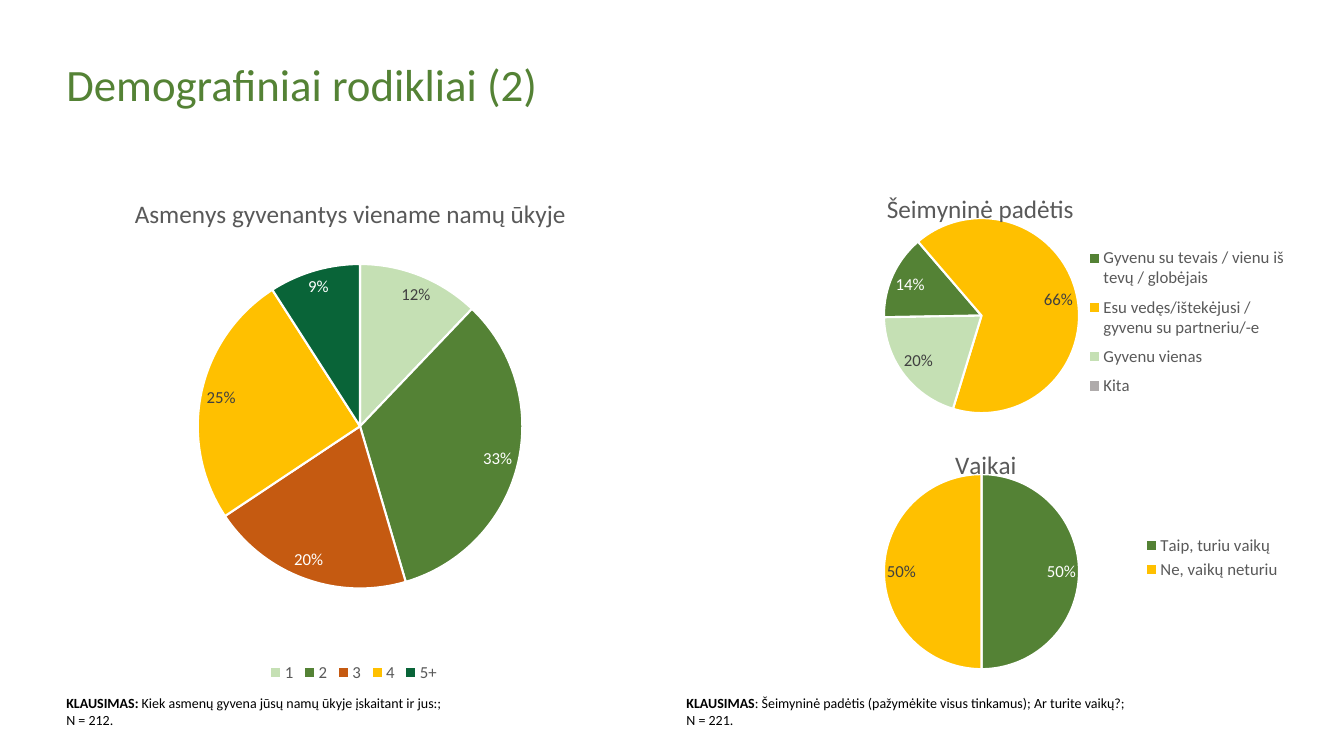
from lxml import etree
from pptx import Presentation
from pptx.chart.data import CategoryChartData
from pptx.dml.color import RGBColor as RGB
from pptx.enum.chart import XL_CHART_TYPE as CT, XL_LABEL_POSITION as LP, XL_LEGEND_POSITION as LG
from pptx.enum.text import MSO_ANCHOR as MA, PP_ALIGN as PA
from pptx.oxml.ns import qn
from pptx.util import Inches, Pt

COLORS = {"green": "548235", "gold": "FFC000", "light": "C5E0B4", "rust": "C55A11",
          "forest": "096438", "gray": "AFABAB", "black": "000000", "white": "FFFFFF",
          "label": "404040", "muted": "595959"}
DARK = {"green", "rust", "forest"}


class SlideBuilder:
    font = "Calibri"

    def __init__(self, prs):
        self.slide = prs.slides.add_slide(prs.slide_layouts[6])

    def style(self, font, size, color, bold=False):
        values = {"name": self.font, "size": Pt(size), "bold": bold}
        for name, value in values.items():
            setattr(font, name, value)
        font.color.rgb = RGB.from_string(COLORS[color])

    def text(self, box, paragraphs, size, color, anchor=MA.TOP, **formats):
        sp = self.slide.shapes.add_textbox(*map(Inches, box))
        tf = sp.text_frame
        tf.word_wrap = True
        tf.vertical_anchor = anchor
        for i, runs in enumerate(paragraphs):
            p = tf.add_paragraph() if i else tf.paragraphs[0]
            for name, value in formats.items():
                setattr(p, name, value)
            for content, bold in runs:
                r = p.add_run()
                r.text = content
                self.style(r.font, size, color, bold)

    def layout(self, parent, before, target=None, **fractions):
        for old in parent.findall(qn("c:layout")):
            parent.remove(old)
        layout = etree.Element(qn("c:layout"))
        manual = etree.SubElement(layout, qn("c:manualLayout"))
        values = {"layoutTarget": target, "xMode": "edge", "yMode": "edge", **fractions}
        for name, value in values.items():
            if value is not None:
                etree.SubElement(manual, qn("c:" + name)).set("val", str(value))
        parent.find(qn(before)).addprevious(layout)

    def pie(self, box, title, title_at, plot, slices, fmt, legend, legend_at=None, start=0):
        data = CategoryChartData(number_format=fmt)
        data.categories = [name for name, _, _ in slices]
        data.add_series("Series 1", [value for _, value, _ in slices])
        chart = self.slide.shapes.add_chart(CT.PIE, *map(Inches, box), data).chart
        self.style(chart.font, 10, "black")

        chart.has_title = True
        tf = chart.chart_title.text_frame
        tf.text = title
        self.style(tf.paragraphs[0].runs[0].font, 18, "muted")
        self.layout(chart.chart_title._element, "c:overlay", x=title_at[0], y=title_at[1])

        chart.has_legend = True
        chart.legend.position = legend
        chart.legend.include_in_layout = False
        self.style(chart.legend.font, 12, "muted")
        if legend_at:
            self.layout(chart.legend._element, "c:overlay", **dict(zip("xywh", legend_at)))

        pie = chart.plots[0]
        pie.vary_by_categories = True
        area = pie._element.getparent()
        self.layout(area, "c:pieChart", "inner", **dict(zip("xywh", plot)))
        angle = pie._element.find(qn("c:firstSliceAng"))
        if angle is None:
            angle = etree.SubElement(pie._element, qn("c:firstSliceAng"))
        angle.set("val", str(start))

        series = pie.series[0]
        labels = series.data_labels
        formats = {"show_value": True, "show_percentage": False, "number_format": fmt,
                   "number_format_is_linked": False, "position": LP.BEST_FIT}
        for name, value in formats.items():
            setattr(labels, name, value)
        self.style(labels.font, 12, "label")
        for i, (_, _, color) in enumerate(slices):
            point = series.points[i]
            point.format.fill.solid()
            point.format.fill.fore_color.rgb = RGB.from_string(COLORS[color])
            point.format.line.color.rgb = RGB.from_string(COLORS["white"])
            point.format.line.width = Pt(1.5)
            if color in DARK:
                self.style(point.data_label.font, 12, "white")
                point.data_label.position = LP.BEST_FIT


def main():
    prs = Presentation()
    prs.slide_width, prs.slide_height = Inches(13.33), Inches(7.5)
    s = SlideBuilder(prs)
    s.text((0.56, 0.35, 12.32, 1.03), [[("Demografiniai rodikliai (2)", False)]],
           32, "green", MA.MIDDLE, line_spacing=0.9)

    s.pie((0.43, 1.7, 6.16, 5.11), "Asmenys gyvenantys viename namų ūkyje", (0.14, 0.04),
          (0.22, 0.18, 0.58, 0.63),
          [("1", 0.12, "light"), ("2", 0.33, "green"), ("3", 0.2, "rust"),
           ("4", 0.25, "gold"), ("5+", 0.09, "forest")], "0%", LG.BOTTOM)

    small_plot = (0.34, 0.18, 0.32, 0.75)
    s.pie((6.66, 1.7, 6.15, 2.58), "Šeimyninė padėtis", (0.34, 0.06), small_plot,
          [("Gyvenu su tevais / vienu iš tevų / globėjais", 0.14, "green"),
           ("Esu vedęs/ištekėjusi / gyvenu su partneriu/-e", 0.66, "gold"),
           ("Gyvenu vienas", 0.2, "light"), ("Kita", 0, "gray")],
          "###0%", LG.RIGHT, (0.67, 0.26, 0.33, 0.64), 269)
    s.pie((6.66, 4.24, 6.15, 2.58), "Vaikai", (0.45, 0.06), small_plot,
          [("Taip, turiu vaikų", 0.5, "green"), ("Ne, vaikų neturiu", 0.5, "gold")],
          "###0%", LG.RIGHT)

    notes = [(0.56, "KLAUSIMAS: ", "Kiek asmenų gyvena jūsų namų ūkyje įskaitant ir jus:;", "N = 212."),
             (6.71, "KLAUSIMAS", ": Šeimyninė padėtis (pažymėkite visus tinkamus); Ar turite vaikų?;", "N = 221.")]
    for x, heading, question, count in notes:
        s.text((x, 6.84, 6.1, 0.44), [[(heading, True), (question, False)], [(count, False)]],
               10, "black", alignment=PA.JUSTIFY)
    prs.save("out.pptx")


if __name__ == "__main__":
    main()
